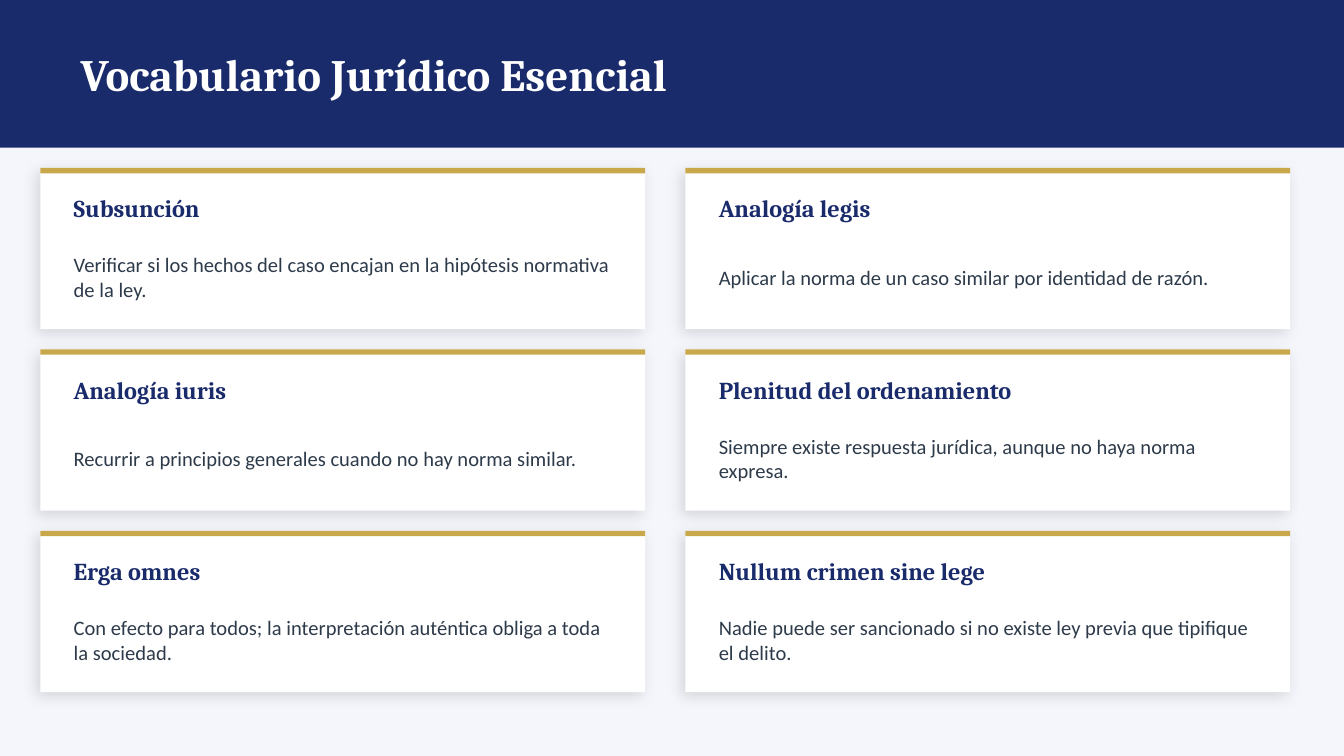
from lxml.etree import SubElement
from pptx import Presentation
from pptx.dml.color import RGBColor
from pptx.enum.shapes import MSO_SHAPE
from pptx.enum.text import MSO_ANCHOR, MSO_AUTO_SIZE, PP_ALIGN
from pptx.oxml.ns import qn
from pptx.util import Pt

TITLE = "Vocabulario Jurídico Esencial"
TERMS = [
    ("Subsunción", "Verificar si los hechos del caso encajan en la hipótesis normativa de la ley."),
    ("Analogía legis", "Aplicar la norma de un caso similar por identidad de razón."),
    ("Analogía iuris", "Recurrir a principios generales cuando no hay norma similar."),
    ("Plenitud del ordenamiento", "Siempre existe respuesta jurídica, aunque no haya norma expresa."),
    ("Erga omnes", "Con efecto para todos; la interpretación auténtica obliga a toda la sociedad."),
    ("Nullum crimen sine lege", "Nadie puede ser sancionado si no existe ley previa que tipifique el delito."),
]
NAVY, GOLD, WHITE, SLATE, PALE = "1A2B6B", "C9A84C", "FFFFFF", "2D3A4A", "F4F6FB"
SERIF, SANS = "Cambria", "Calibri"
WIDTH, HEIGHT, BANNER_HEIGHT = 720, 405, 79.2
COLUMNS, GRID_LEFT, GRID_TOP = 2, 21.6, 90
CARD_WIDTH, CARD_HEIGHT, COLUMN_GAP, ROW_GAP = 324, 86.4, 21.6, 10.8
ACCENT_HEIGHT, PADDING = 2.88, 10.8


def color(hex_value):
    return RGBColor.from_string(hex_value)


def add_rectangle(slide, left, top, width, height, fill):
    shape = slide.shapes.add_shape(MSO_SHAPE.RECTANGLE, Pt(left), Pt(top), Pt(width), Pt(height))
    shape.fill.solid()
    shape.fill.fore_color.rgb = color(fill)
    shape.line.fill.background()
    shape.shadow.inherit = False
    return shape


def add_soft_shadow(shape):
    effects = shape.element.spPr.find(qn("a:effectLst"))
    shadow = SubElement(effects, qn("a:outerShdw"), blurRad=str(Pt(8)), dist=str(Pt(3)),
                        dir=str(135 * 60000), algn="bl", rotWithShape="0")
    shadow_color = SubElement(shadow, qn("a:srgbClr"), val="000000")
    SubElement(shadow_color, qn("a:alpha"), val="13000")


def write_text(shape, text, size, font_name, text_color, bold=False):
    frame = shape.text_frame
    frame.word_wrap = True
    frame.auto_size = MSO_AUTO_SIZE.NONE
    frame.vertical_anchor = MSO_ANCHOR.MIDDLE
    frame.text = text
    paragraph = frame.paragraphs[0]
    paragraph.alignment = PP_ALIGN.LEFT
    font = paragraph.font
    font.size, font.name, font.bold = Pt(size), font_name, bold
    font.color.rgb = color(text_color)


def add_card(slide, left, top, term, definition):
    add_soft_shadow(add_rectangle(slide, left, top, CARD_WIDTH, CARD_HEIGHT, WHITE))
    add_rectangle(slide, left, top, CARD_WIDTH, ACCENT_HEIGHT, GOLD)
    text_left, text_width = Pt(left + PADDING), Pt(CARD_WIDTH - 2 * PADDING)
    heading = slide.shapes.add_textbox(text_left, Pt(top + 7.2), text_width, Pt(28.8))
    write_text(heading, term, 13, SERIF, NAVY, bold=True)
    body = slide.shapes.add_textbox(text_left, Pt(top + 36), text_width, Pt(44.64))
    write_text(body, definition, 11, SANS, SLATE)


def main():
    """Build the legal vocabulary slide and save it."""
    presentation = Presentation()
    presentation.slide_width, presentation.slide_height = Pt(WIDTH), Pt(HEIGHT)
    slide = presentation.slides.add_slide(presentation.slide_layouts[5])
    slide.background.fill.solid()
    slide.background.fill.fore_color.rgb = color(PALE)

    title = slide.shapes.title
    title.left, title.top, title.width, title.height = Pt(36), Pt(14.4), Pt(648), Pt(50.4)
    write_text(title, TITLE, 24, SERIF, WHITE, bold=True)
    banner = add_rectangle(slide, 0, 0, WIDTH, BANNER_HEIGHT, NAVY)
    title.element.addprevious(banner.element)

    for index, (term, definition) in enumerate(TERMS):
        row, column = divmod(index, COLUMNS)
        left = GRID_LEFT + column * (CARD_WIDTH + COLUMN_GAP)
        top = GRID_TOP + row * (CARD_HEIGHT + ROW_GAP)
        add_card(slide, left, top, term, definition)

    presentation.save("out.pptx")


if __name__ == "__main__":
    main()
